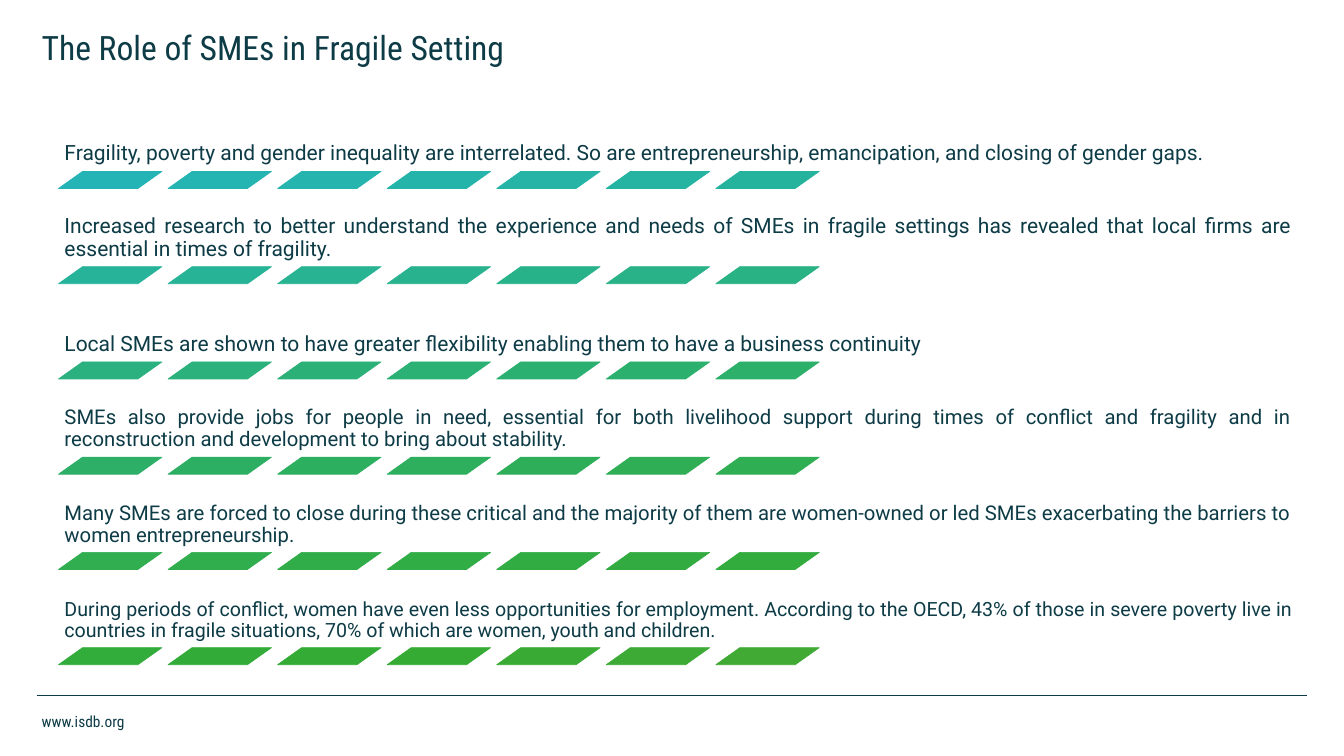
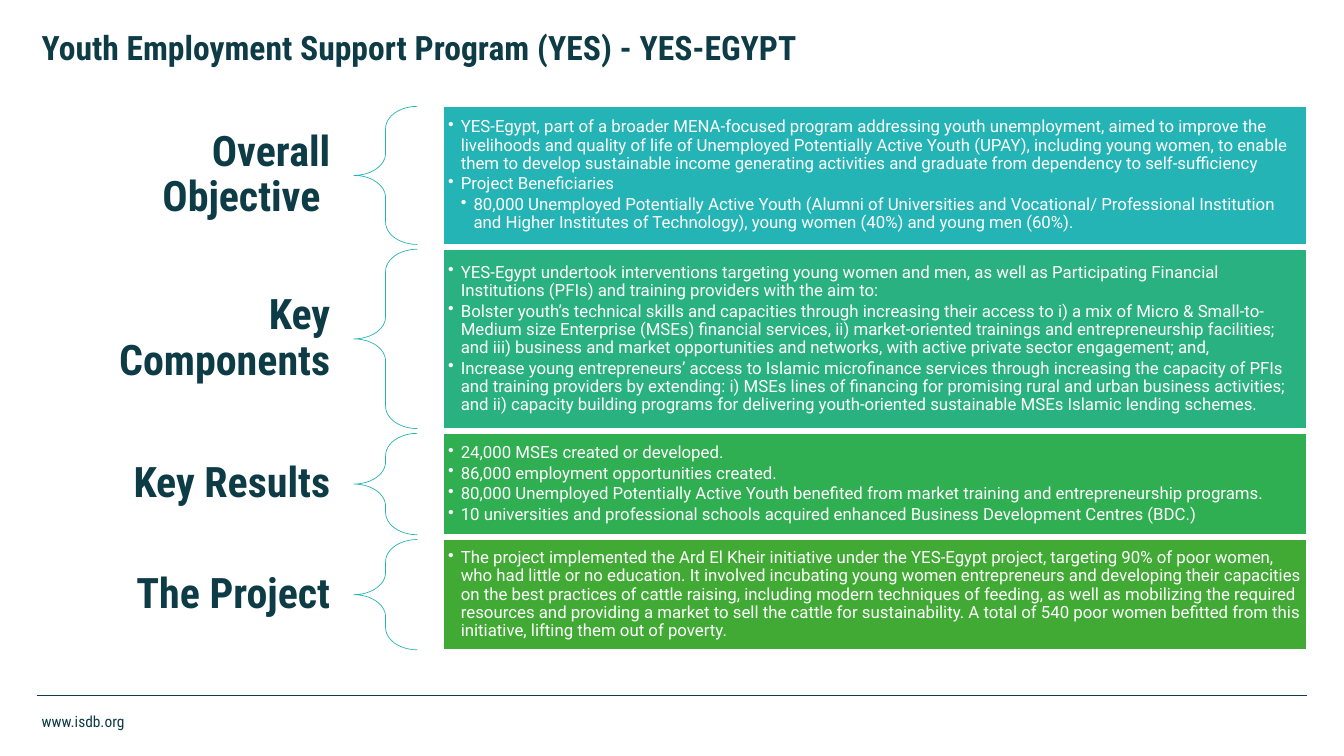
"""Build two slides on small firms in fragile settings and a youth job program."""
from colorsys import hls_to_rgb, rgb_to_hls

from lxml import etree
from pptx import Presentation
from pptx.dml.color import RGBColor
from pptx.enum.shapes import MSO_CONNECTOR, MSO_SHAPE
from pptx.enum.text import MSO_ANCHOR, PP_ALIGN
from pptx.oxml.ns import qn
from pptx.util import Cm, Pt

STRAIGHT = MSO_CONNECTOR.STRAIGHT
RECT = MSO_SHAPE.RECTANGLE
BRACE = MSO_SHAPE.LEFT_BRACE
TILE = MSO_SHAPE.PARALLELOGRAM
TOP, MIDDLE, BOTTOM = MSO_ANCHOR.TOP, MSO_ANCHOR.MIDDLE, MSO_ANCHOR.BOTTOM
LEFT, RIGHT, JUSTIFY = PP_ALIGN.LEFT, PP_ALIGN.RIGHT, PP_ALIGN.JUSTIFY

COLORS = {"ink": "0D3B46", "teal": "24B4B5", "green": "40AA35", "white": "FFFFFF"}
BODY, HEAD = "Roboto", "Roboto Condensed"
MARGIN, CONTENT_W = 1.85, 64.01

ROLES = [
    ("Fragility, poverty and gender inequality are interrelated. So are entrepreneurship, "
     "emancipation, and closing of gender gaps.", 30),
    ("Increased research to better understand the experience and needs of SMEs in fragile "
     "settings has revealed that local firms are essential in times of fragility.", 30),
    ("Local SMEs are shown to have greater flexibility enabling them to have a business "
     "continuity", 30),
    ("SMEs also provide jobs for people in need, essential for both livelihood support during "
     "times of conflict and fragility and in reconstruction and development to bring about "
     "stability.", 29),
    ("Many SMEs are forced to close during these critical and the majority of them are "
     "women-owned or led SMEs exacerbating the barriers to women entrepreneurship.", 29),
    ("During periods of conflict, women have even less opportunities for employment. According "
     "to the OECD, 43% of those in severe poverty live in countries in fragile situations, 70% "
     "of which are women, youth and children.", 28),
]

SECTIONS = [
    ("Overall Objective ", 6.96, [
        (1, "YES-Egypt, part of a broader MENA-focused program addressing youth unemployment, "
            "aimed to improve the livelihoods and quality of life of Unemployed Potentially "
            "Active Youth (UPAY), including young women, to enable them to develop sustainable "
            "income generating activities and graduate from dependency to self-sufficiency"),
        (1, "Project Beneficiaries"),
        (2, "80,000 Unemployed Potentially Active Youth (Alumni of Universities and Vocational/ "
            "Professional Institution and Higher Institutes of Technology), young women (40%) "
            "and young men (60%).")]),
    ("Key Components", 9.04, [
        (1, "YES-Egypt undertook interventions targeting young women and men, as well as "
            "Participating Financial Institutions (PFIs) and training providers with the aim "
            "to:"),
        (1, "Bolster youth’s technical skills and capacities through increasing their access to "
            "i) a mix of Micro & Small-to-Medium size Enterprise (MSEs) financial services, ii) "
            "market-oriented trainings and entrepreneurship facilities; and iii) business and "
            "market opportunities and networks, with active private sector engagement; and,"),
        (1, "Increase young entrepreneurs’ access to Islamic microfinance services through "
            "increasing the capacity of PFIs and training providers by extending: i) MSEs lines "
            "of financing for promising rural and urban business activities; and ii) capacity "
            "building programs for delivering youth-oriented sustainable MSEs Islamic lending "
            "schemes.")]),
    ("Key Results", 5.11, [
        (1, "24,000 MSEs created or developed."),
        (1, "86,000 employment opportunities created."),
        (1, "80,000 Unemployed Potentially Active Youth benefited from market training and "
            "entrepreneurship programs."),
        (1, "10 universities and professional schools acquired enhanced Business Development "
            "Centres (BDC.)")]),
    ("The Project", 5.56, [
        (1, "The project implemented the Ard El Kheir initiative under the YES-Egypt project, "
            "targeting 90% of poor women, who had little or no education. It involved incubating "
            "young women entrepreneurs and developing their capacities on the best practices of "
            "cattle raising, including modern techniques of feeding, as well as mobilizing the "
            "required resources and providing a market to sell the cattle for sustainability. A "
            "total of 540 poor women befitted from this initiative, lifting them out of "
            "poverty.")]),
]


def rgb(color):
    return RGBColor.from_string(COLORS.get(color, color))


def blend(t):
    """Return the hue between teal (0) and green (1) as a hex string."""
    start, end = (rgb_to_hls(*(v / 255 for v in rgb(c))) for c in ("teal", "green"))
    mixed = hls_to_rgb(*(a + (b - a) * t for a, b in zip(start, end)))
    return "".join(f"{round(v * 255):02X}" for v in mixed)


class Deck:
    """Hold the presentation, its style and the current slide."""

    def __init__(self):
        self.prs = Presentation()
        self.prs.slide_width, self.prs.slide_height = Cm(67.72), Cm(38.1)

    def slide(self, title, bold=False):
        self.s = self.prs.slides.add_slide(self.prs.slide_layouts[6])
        self.text(MARGIN, 35.74, 18.62, 1.19, "www.isdb.org", 22, HEAD, spacing=1.0)
        self.line(MARGIN, 35.05, MARGIN + CONTENT_W)
        self.text(MARGIN, 1.45, CONTENT_W, 3.43, title, 48, HEAD, bold=bold)

    def line(self, x, y, x2):
        c = self.s.shapes.add_connector(STRAIGHT, Cm(x), Cm(y), Cm(x2), Cm(y))
        c.line.color.rgb = rgb("ink")
        c.line.width = Pt(0.5)
        etree.SubElement(c._element.spPr, qn("a:effectLst"))

    def frame(self, sp, anchor, inset):
        tf = sp.text_frame
        tf.word_wrap = True
        tf.vertical_anchor = anchor
        tf.margin_left = tf.margin_right = Cm(inset[0])
        tf.margin_top = tf.margin_bottom = Cm(inset[1])
        return tf

    def run(self, p, text, size, font, color="ink", bold=False):
        r = p.add_run()
        r.text = text
        r.font.size, r.font.name, r.font.bold = Pt(size), font, bold
        r.font.color.rgb = rgb(color)

    def text(self, x, y, w, h, text, size, font, bold=False, align=LEFT,
             anchor=TOP, inset=(0.25, 0.13), spacing=0.9):
        sp = self.s.shapes.add_textbox(Cm(x), Cm(y), Cm(w), Cm(h))
        p = self.frame(sp, anchor, inset).paragraphs[0]
        p.alignment, p.line_spacing = align, spacing
        self.run(p, text, size, font, bold=bold)

    def shape(self, kind, x, y, w, h, fill, line, adj=()):
        sp = self.s.shapes.add_shape(kind, Cm(x), Cm(y), Cm(w), Cm(h))
        sp.shadow.inherit = False
        for i, value in enumerate(adj):
            sp.adjustments[i] = value
        if fill:
            sp.fill.solid()
            sp.fill.fore_color.rgb = rgb(fill)
        else:
            sp.fill.background()
        sp.line.color.rgb = rgb(line)
        sp.line.width = Pt(1)
        return sp

    def bullets(self, sp, items, size=24):
        tf = self.frame(sp, MIDDLE, (0.25, 0.25))
        for i, (level, text) in enumerate(items):
            p = tf.add_paragraph() if i else tf.paragraphs[0]
            p.level, p.alignment = level, LEFT
            p.line_spacing, p.space_after = 0.9, Pt(size * 0.15)
            pPr = p._p.get_or_add_pPr()
            pPr.set("marL", str(Cm(0.64 * level)))
            pPr.set("indent", str(-Cm(0.64)))
            etree.SubElement(pPr, qn("a:buChar"), char="•")
            self.run(p, text, size, BODY, "white")


def role_slide(deck):
    deck.slide("The Role of SMEs in Fragile Setting")
    tiles = 7
    last = len(ROLES) * tiles - 1
    for row, (text, size) in enumerate(ROLES):
        y = 5.08 + 4.8 * row
        deck.text(2.95, y, 62.46, 3.56, text, size, BODY, align=JUSTIFY,
                  anchor=BOTTOM, inset=(0.3, 0.3))
        for col in range(tiles):
            color = blend((row * tiles + col) / last)
            deck.shape(TILE, 2.95 + 5.52 * col, y + 3.56, 5.21, 0.86, color, color, [1.41])


def program_slide(deck):
    deck.slide("Youth Employment Support Program (YES) - YES-EGYPT", bold=True)
    y, gap, label_h = 5.36, 0.24, 3.71
    for i, (label, h, items) in enumerate(SECTIONS):
        deck.text(MARGIN, y + (h - label_h) / 2, 15.98, label_h, label, 60, HEAD, bold=True,
                  align=RIGHT, anchor=MIDDLE, inset=(1.19, 0.43))
        deck.shape(BRACE, 17.83, y, 3.2, h, None, "teal", [0.35, 0.5])
        panel = deck.shape(RECT, 22.33, y, 43.5, h, blend(i / (len(SECTIONS) - 1)), "white")
        deck.bullets(panel, items)
        y += h + gap


def main():
    deck = Deck()
    role_slide(deck)
    program_slide(deck)
    deck.prs.save("out.pptx")


if __name__ == "__main__":
    main()
